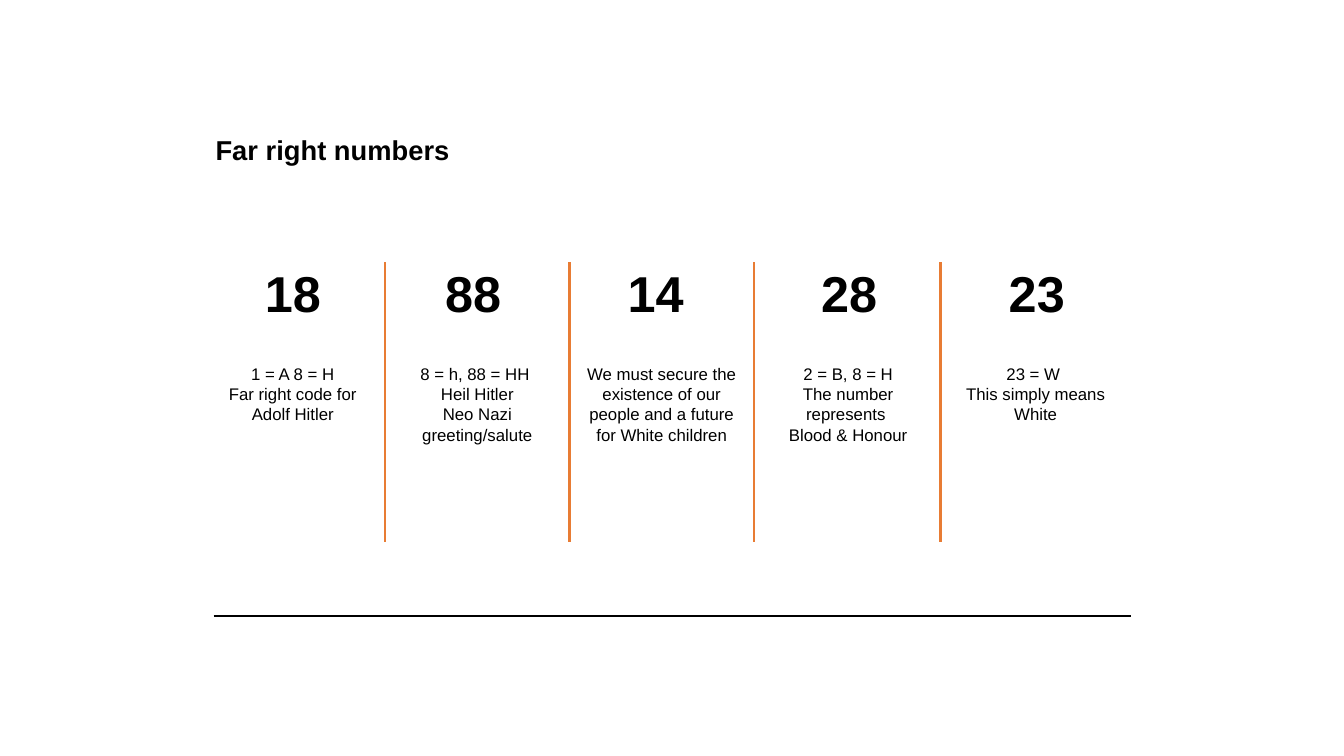
from dataclasses import dataclass

from pptx import Presentation
from pptx.dml.color import RGBColor
from pptx.enum import shapes, text
from pptx.oxml.ns import qn
from pptx.slide import Slide
from pptx.util import Pt
from lxml import etree

COLORS = {"ink": "000000", "rule": "E87C34"}
FORMATS = {
    "title": {"name": "Arial", "size": Pt(19.5), "bold": True},
    "code": {"name": "Arial", "size": Pt(36), "bold": True},
    "note": {"name": "Arial", "size": Pt(12), "bold": False},
}
LEFT, CENTER = text.PP_ALIGN.LEFT, text.PP_ALIGN.CENTER
WIDTH = 130.3
RULE_TOP, RULE_END = 187.2, 387.4


@dataclass
class Column:
    code: str
    lines: list[str]
    code_x: float
    note_x: float
    rule_x: float | None = None


COLUMNS = [
    Column("18", ["1 = A 8 = H", "Far right code for Adolf Hitler"],
           144, 144, 275),
    Column("88", ["8 = h, 88 = HH ", "Heil Hitler", "Neo Nazi greeting/salute"],
           272.9, 275.8, 406.8),
    Column("14 ", ["We must secure the existence of our people and a future "
                   "for White children"],
           408.2, 407.5, 538.6),
    Column("28", ["2 = B, 8 = H", "The number represents ", "Blood & Honour"],
           541.4, 540.7, 671.8),
    Column("23", ["23 = W ", "This simply means White"],
           675.4, 674.6),
]


def write(slide: Slide, lines: list[str], style: str, x: float, y: float,
          w: float, h: float, align: text.PP_ALIGN = CENTER) -> None:
    """Add a text box with one paragraph per line."""
    box = slide.shapes.add_textbox(Pt(x), Pt(y), Pt(w), Pt(h))
    frame = box.text_frame
    frame.word_wrap = True
    frame.auto_size = text.MSO_AUTO_SIZE.SHAPE_TO_FIT_TEXT
    for i, line in enumerate(lines):
        para = frame.add_paragraph() if i else frame.paragraphs[0]
        para.alignment = align
        run = para.add_run()
        run.text = line
        for key, value in FORMATS[style].items():
            setattr(run.font, key, value)
        run.font.color.rgb = RGBColor.from_string(COLORS["ink"])


def rule(slide: Slide, x1: float, y1: float, x2: float, y2: float,
         color: str, weight: float) -> None:
    """Add a straight line without a shadow."""
    line = slide.shapes.add_connector(
        shapes.MSO_CONNECTOR.STRAIGHT, Pt(x1), Pt(y1), Pt(x2), Pt(y2))
    line.line.color.rgb = RGBColor.from_string(COLORS[color])
    line.line.width = Pt(weight)
    etree.SubElement(line._element.spPr, qn("a:effectLst"))


def draw(slide: Slide, col: Column) -> None:
    if col.rule_x is not None:
        rule(slide, col.rule_x, RULE_TOP, col.rule_x, RULE_END, "rule", 1.5)
    write(slide, [col.code], "code", col.code_x, 183.6, WIDTH, 51)
    height = 51 if len(col.lines) == 2 else 65.5
    write(slide, col.lines, "note", col.note_x, 256.3, WIDTH, height)


def main() -> None:
    deck = Presentation()
    deck.slide_width, deck.slide_height = Pt(960), Pt(540)
    slide = deck.slides.add_slide(deck.slide_layouts[6])
    write(slide, ["Far right numbers"], "title", 146.9, 91.4, 469.4, 31, LEFT)
    rule(slide, 152.6, 440, 807.8, 440, "ink", 0.75)
    for col in COLUMNS:
        draw(slide, col)
    deck.save("out.pptx")


if __name__ == "__main__":
    main()
